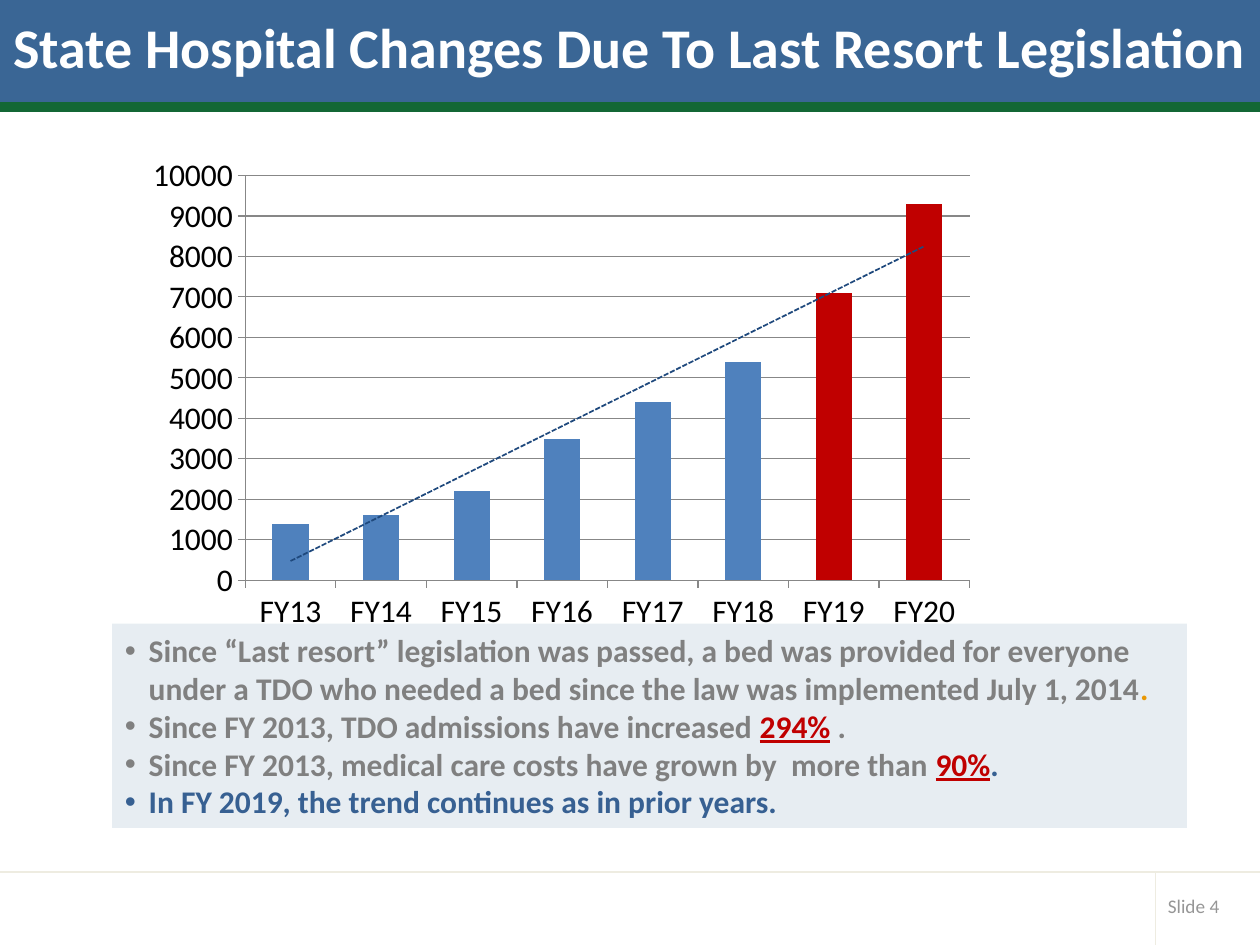
"""Build the slide on state hospital changes due to last resort legislation."""
from dataclasses import dataclass

from lxml import etree
from pptx import Presentation
from pptx import util as u
from pptx.chart import data as chart_data
from pptx.dml import color
from pptx.enum import chart as ch, shapes, text
from pptx.oxml import ns, parse_xml

WIDTH, HEIGHT = u.Inches(10), u.Inches(7.5)
FONT = "Calibri"
COLORS = {
    "banner": "3A6695", "stripe": "136735", "rule": "EEECE1", "number": "969696",
    "white": "FFFFFF", "black": "000000", "panel": "5E8BAA", "gray": "808080",
    "orange": "E99805", "red": "C00000", "blue": "376092", "bar": "4F81BD",
    "trend": "1F497D", "axis": "878787",
}
FOOTER_TOP, NUMBER_LEFT = 0.923, 0.917
BANNER_HEIGHT = 0.11


@dataclass
class Area:
    """A rectangle in shares of the slide's size."""
    left: float
    top: float
    width: float
    height: float

    def emu(self) -> tuple[int, int, int, int]:
        """Return left, top, width and height as lengths."""
        return (int(self.left * WIDTH), int(self.top * HEIGHT),
                int(self.width * WIDTH), int(self.height * HEIGHT))


@dataclass
class Band:
    """A filled strip across the top of the slide."""
    area: Area
    color: str


@dataclass
class Rule:
    """A thin footer line in shares of the slide's size."""
    start: tuple[float, float]
    end: tuple[float, float]


@dataclass
class Piece:
    """A stretch of text in one colour."""
    words: str
    color: str
    underline: bool = False


BANNER = Area(0, 0, 1, BANNER_HEIGHT)
BANDS = [Band(BANNER, "banner"),
         Band(Area(0, BANNER_HEIGHT, 1, 0.007), "stripe")]
RULES = [Rule((0, FOOTER_TOP), (1, FOOTER_TOP)),
         Rule((NUMBER_LEFT, FOOTER_TOP), (NUMBER_LEFT, 1))]
POINTS = [
    [Piece("Since “Last resort” legislation was passed, a bed was provided for everyone "
           "under a TDO who needed a bed since the law was implemented July 1, 2014", "gray"),
     Piece(".", "orange")],
    [Piece("Since FY 2013, TDO admissions have increased ", "gray"),
     Piece("294%", "red", True), Piece(" ", "red"), Piece(".", "gray")],
    [Piece("Since FY 2013, medical care costs have grown by  more than ", "gray"),
     Piece("90%", "red", True), Piece(".", "blue")],
    [Piece("In FY 2019, the trend continues as in prior years.", "blue")],
]
ADMISSIONS = {"FY13": 1400, "FY14": 1600, "FY15": 2200, "FY16": 3500,
              "FY17": 4400, "FY18": 5400, "FY19": 7100, "FY20": 9300}
HIGHLIGHTED = ("FY19", "FY20")


def rgb(name: str) -> color.RGBColor:
    """Look up a named colour."""
    return color.RGBColor.from_string(COLORS[name])


def style(font, size: float, name: str, bold: bool = False) -> None:
    """Set face, size, colour and weight of a font."""
    font.name, font.size, font.bold = FONT, u.Pt(size), bold
    font.color.rgb = rgb(name)


def place(shape, area: Area) -> None:
    """Move a shape to an area."""
    shape.left, shape.top, shape.width, shape.height = area.emu()


def add_band(slide, band: Band, depth: int) -> None:
    """Draw a strip behind the placeholders."""
    strip = slide.shapes.add_shape(shapes.MSO_SHAPE.RECTANGLE, *band.area.emu())
    strip.shadow.inherit = False
    strip.fill.solid()
    strip.fill.fore_color.rgb = strip.line.color.rgb = rgb(band.color)
    strip.line.width = u.Pt(2)
    slide.shapes.element.insert(2 + depth, strip.element)


def add_rule(slide, rule: Rule) -> None:
    """Draw a footer line."""
    (x1, y1), (x2, y2) = rule.start, rule.end
    line = slide.shapes.add_connector(
        shapes.MSO_CONNECTOR.STRAIGHT, int(x1 * WIDTH), int(y1 * HEIGHT),
        int(x2 * WIDTH), int(y2 * HEIGHT))
    line.line.color.rgb = rgb("rule")
    line.line.width = u.Pt(1)
    etree.SubElement(line.element.spPr, ns.qn("a:effectLst"))


def add_title(slide, words: str) -> None:
    """Fill the title placeholder."""
    title = slide.shapes.title
    place(title, BANNER)
    frame = title.text_frame
    frame.text = words
    frame.auto_size = text.MSO_AUTO_SIZE.NONE
    frame.vertical_anchor = text.MSO_ANCHOR.MIDDLE
    heading = frame.paragraphs[0]
    heading.alignment = text.PP_ALIGN.CENTER
    heading.line_spacing = u.Pt(32)
    style(heading.runs[0].font, 32, "white", True)


def add_findings(slide) -> None:
    """Fill the body placeholder with the bulleted findings."""
    findings = slide.placeholders[1]
    place(findings, Area(0.089, 0.66, 0.853, 0.216))
    findings.fill.solid()
    findings.fill.fore_color.rgb = rgb("panel")
    tint = findings.element.spPr.find(".//" + ns.qn("a:srgbClr"))
    etree.SubElement(tint, ns.qn("a:alpha"), val="15000")
    frame = findings.text_frame
    frame.auto_size = text.MSO_AUTO_SIZE.NONE
    frame.vertical_anchor = text.MSO_ANCHOR.MIDDLE
    for index, pieces in enumerate(POINTS):
        point = frame.add_paragraph() if index else frame.paragraphs[0]
        props = point._p.get_or_add_pPr()
        indent = u.Inches(0.19)
        props.set("marL", str(indent))
        props.set("indent", str(-indent))
        etree.SubElement(props, ns.qn("a:buFont"), typeface="Arial")
        etree.SubElement(props, ns.qn("a:buChar"), char="•")
        point.space_before = u.Pt(0)
        point.alignment = text.PP_ALIGN.LEFT
        for piece in pieces:
            run = point.add_run()
            run.text = piece.words
            style(run.font, 18, piece.color, True)
            run.font.underline = piece.underline


def add_admissions_chart(slide) -> None:
    """Draw the yearly columns with their linear trend."""
    source = chart_data.CategoryChartData()
    source.categories = list(ADMISSIONS)
    source.add_series("Series 1", list(ADMISSIONS.values()))
    chart = slide.shapes.add_chart(ch.XL_CHART_TYPE.COLUMN_CLUSTERED,
                                   *Area(0.108, 0.155, 0.675, 0.523).emu(), source).chart
    chart.has_legend = chart.has_title = False
    style(chart.font, 18, "black")
    for axis in (chart.category_axis, chart.value_axis):
        axis.major_tick_mark = ch.XL_TICK_MARK.OUTSIDE
        axis.format.line.color.rgb = rgb("axis")
    scale = chart.value_axis
    scale.minimum_scale, scale.maximum_scale, scale.major_unit = 0, 10000, 1000
    scale.has_major_gridlines = True
    scale.major_gridlines.format.line.color.rgb = rgb("axis")
    plot = chart.plots[0]
    plot.gap_width, plot.vary_by_categories = 150, False
    columns = plot.series[0]
    columns.format.fill.solid()
    columns.format.fill.fore_color.rgb = rgb("bar")
    for index, year in enumerate(ADMISSIONS):
        if year in HIGHLIGHTED:
            fill = columns.points[index].format.fill
            fill.solid()
            fill.fore_color.rgb = rgb("red")
    trend = parse_xml(
        f'<c:trendline {ns.nsdecls("c", "a")}><c:spPr><a:ln w="{u.Pt(1)}"><a:solidFill>'
        f'<a:srgbClr val="{COLORS["trend"]}"/></a:solidFill><a:prstDash val="sysDash"/></a:ln>'
        '</c:spPr><c:trendlineType val="linear"/><c:dispRSqr val="0"/>'
        '<c:dispEq val="0"/></c:trendline>')
    columns._element.find(ns.qn("c:cat")).addprevious(trend)


def add_slide_number(slide) -> None:
    """Write the slide number in the footer corner."""
    frame = slide.shapes.add_textbox(*Area(NUMBER_LEFT, 0.939, 0.074, 0.039).emu()).text_frame
    frame.text = "Slide 4"
    frame.word_wrap = False
    frame.vertical_anchor = text.MSO_ANCHOR.MIDDLE
    style(frame.paragraphs[0].runs[0].font, 11, "number")


def main() -> None:
    """Build and save the slide."""
    deck = Presentation()
    deck.slide_width, deck.slide_height = WIDTH, HEIGHT
    slide = deck.slides.add_slide(deck.slide_layouts[1])
    for depth, band in enumerate(BANDS):
        add_band(slide, band, depth)
    for rule in RULES:
        add_rule(slide, rule)
    add_slide_number(slide)
    add_title(slide, "State Hospital Changes Due To Last Resort Legislation")
    add_findings(slide)
    add_admissions_chart(slide)
    deck.save("out.pptx")


if __name__ == "__main__":
    main()
